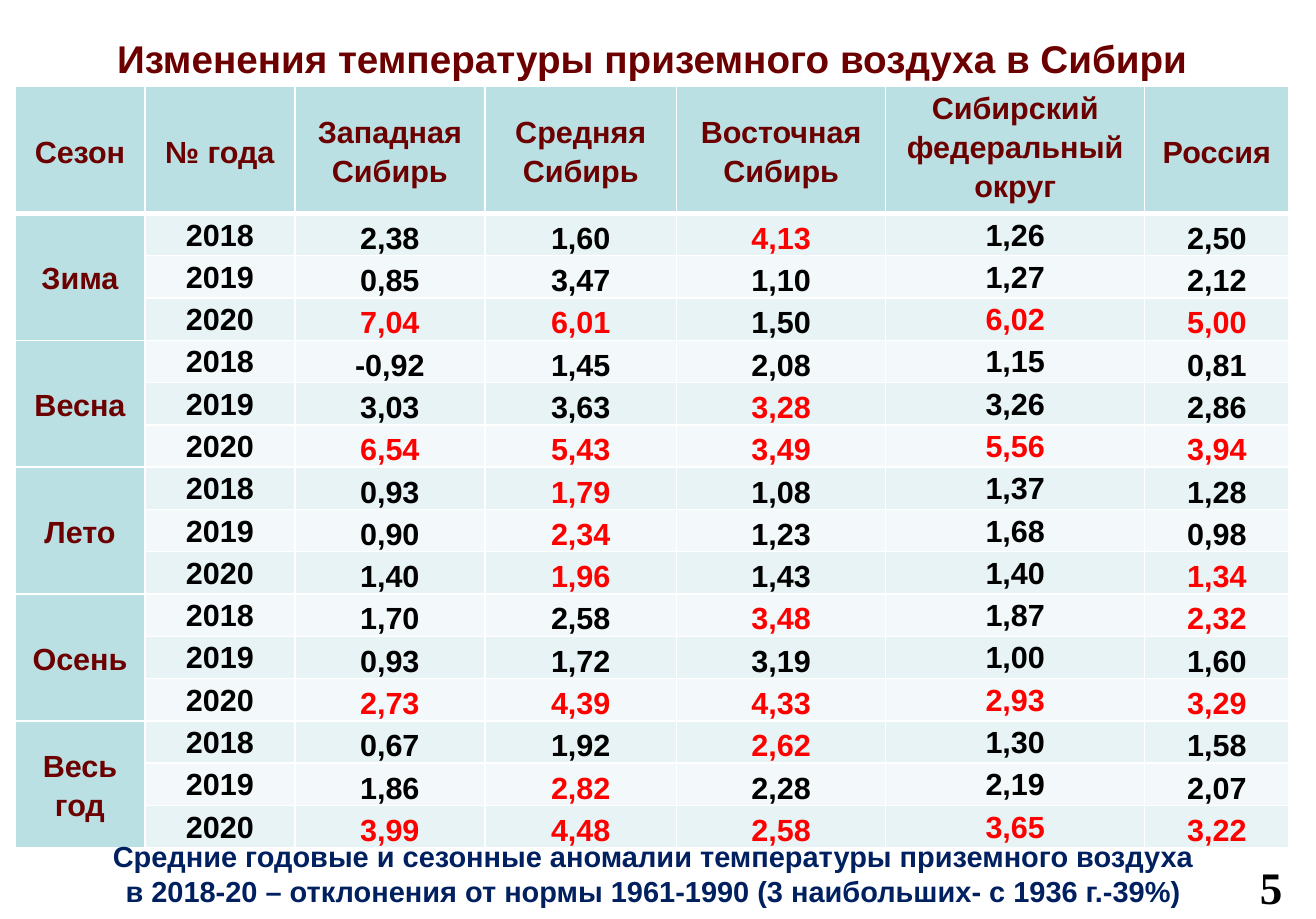
"""Build a slide with a table of seasonal air temperature anomalies in Siberia."""
from lxml.etree import SubElement
from pptx import Presentation
from pptx.dml.color import RGBColor
from pptx.enum.text import MSO_ANCHOR as Anchor, MSO_AUTO_SIZE as AutoSize, PP_ALIGN as Align
from pptx.oxml.ns import qn
from pptx.util import Pt

TITLE = "Изменения температуры приземного воздуха в Сибири"
CAPTION = [
    "Средние годовые и сезонные аномалии температуры приземного воздуха",
    "в 2018-20 – отклонения от нормы 1961-1990 (3 наибольших- с 1936 г.-39%)",
]
PAGE_NUMBER = "5"
HEADERS = ["Сезон", "№ года", "Западная Сибирь", "Средняя Сибирь", "Восточная Сибирь",
           "Сибирский федеральный округ", "Россия"]
YEARS = ["2018", "2019", "2020"]
RECORD_MARK = "*"
SEASONS = {
    "Зима": ["2,38 1,60 4,13* 1,26 2,50",
             "0,85 3,47 1,10 1,27 2,12",
             "7,04* 6,01* 1,50 6,02* 5,00*"],
    "Весна": ["-0,92 1,45 2,08 1,15 0,81",
              "3,03 3,63 3,28* 3,26 2,86",
              "6,54* 5,43* 3,49* 5,56* 3,94*"],
    "Лето": ["0,93 1,79* 1,08 1,37 1,28",
             "0,90 2,34* 1,23 1,68 0,98",
             "1,40 1,96* 1,43 1,40 1,34*"],
    "Осень": ["1,70 2,58 3,48* 1,87 2,32*",
              "0,93 1,72 3,19 1,00 1,60",
              "2,73* 4,39* 4,33* 2,93* 3,29*"],
    "Весь год": ["0,67 1,92 2,62* 1,30 1,58",
                 "1,86 2,82* 2,28 2,19 2,07",
                 "3,99* 4,48* 2,58* 3,65* 3,22*"],
}
COLORS = {"maroon": "6C0000", "navy": "002060", "black": "000000", "red": "FF0000",
          "white": "FFFFFF", "head": "BBE0E3", "odd": "E7F3F4", "even": "F3F9FA"}

SLIDE_SIZE = (818, 571)
COLUMN_WIDTHS = [80.8, 93.2, 118.1, 119.2, 130, 161, 89.7]
HEAD_HEIGHT, ROW_HEIGHT = 78.8, 26.3
TABLE_LEFT, TABLE_TOP = 9.3, 53.8
YEAR_COLUMN, DISTRICT_COLUMN = 1, 5


def rgb(name):
    return RGBColor.from_string(COLORS[name])


def set_font(font, size, color, name="Arial"):
    font.size, font.name, font.bold = Pt(size), name, True
    font.color.rgb = rgb(color)


def set_borders(cell, top, bottom):
    properties = cell._tc.get_or_add_tcPr()
    for side, width in (("L", 1), ("R", 1), ("T", top), ("B", bottom)):
        line = SubElement(properties, qn(f"a:ln{side}"), w=str(Pt(width)))
        fill = SubElement(line, qn("a:solidFill"))
        SubElement(fill, qn("a:srgbClr"), val=COLORS["white"])


def fill_cell(cell, text, color, background, anchor, top=1, bottom=1):
    set_borders(cell, top, bottom)
    cell.fill.solid()
    cell.fill.fore_color.rgb = rgb(background)
    cell.margin_left = cell.margin_right = Pt(6.5)
    cell.margin_top = cell.margin_bottom = 0
    cell.vertical_anchor = anchor
    para = cell.text_frame.paragraphs[0]
    para.text = text
    para.alignment, para.line_spacing = Align.CENTER, 1.15
    set_font(para.font, 19, color)


def add_title(page):
    box = page.shapes.title
    box.left, box.top, box.width, box.height = 0, 0, Pt(SLIDE_SIZE[0]), Pt(42)
    frame = box.text_frame
    frame.auto_size, frame.vertical_anchor = AutoSize.NONE, Anchor.TOP
    frame.margin_left = frame.margin_right = Pt(8)
    frame.margin_top = frame.margin_bottom = Pt(4)
    para = frame.paragraphs[0]
    para.alignment, para.line_spacing, para.space_before = Align.CENTER, 1.5, Pt(6.6)
    for text, size in ((TITLE, 24), (" ", 26)):
        span = para.add_run()
        span.text = text
        set_font(span.font, size, "maroon")


def add_anomaly_table(page):
    row_count = 1 + len(SEASONS) * len(YEARS)
    height = HEAD_HEIGHT + (row_count - 1) * ROW_HEIGHT
    table = page.shapes.add_table(row_count, len(HEADERS), Pt(TABLE_LEFT), Pt(TABLE_TOP),
                                  Pt(sum(COLUMN_WIDTHS)), Pt(height)).table
    for column, width in zip(table.columns, COLUMN_WIDTHS):
        column.width = Pt(width)
    for index, row in enumerate(table.rows):
        row.height = Pt(ROW_HEIGHT if index else HEAD_HEIGHT)

    for column, text in enumerate(HEADERS):
        anchor = Anchor.TOP if column == DISTRICT_COLUMN else Anchor.MIDDLE
        fill_cell(table.cell(0, column), text, "maroon", "head", anchor, bottom=3)

    for group, (season, lines) in enumerate(SEASONS.items()):
        first = 1 + group * len(YEARS)
        for row, (year, line) in enumerate(zip(YEARS, lines), first):
            top = 3 if row == 1 else 1
            label = season if row == first else ""
            fill_cell(table.cell(row, 0), label, "maroon", "head", Anchor.MIDDLE, top)
            for column, value in enumerate([year, *line.split()], YEAR_COLUMN):
                color = "red" if value.endswith(RECORD_MARK) else "black"
                raised = column in (YEAR_COLUMN, DISTRICT_COLUMN)
                fill_cell(table.cell(row, column), value.rstrip(RECORD_MARK), color,
                          "odd" if row % 2 else "even",
                          Anchor.TOP if raised else Anchor.BOTTOM, top)
        table.cell(first, 0).merge(table.cell(first + len(YEARS) - 1, 0))


def add_text(page, lines, area, size, color, font, align, wrap):
    frame = page.shapes.add_textbox(*map(Pt, area)).text_frame
    frame.word_wrap = wrap
    frame.margin_top = frame.margin_bottom = Pt(4)
    for index, line in enumerate(lines):
        para = frame.add_paragraph() if index else frame.paragraphs[0]
        para.text, para.alignment = line, align
        set_font(para.font, size, color, font)


def main():
    deck = Presentation()
    deck.slide_width, deck.slide_height = map(Pt, SLIDE_SIZE)
    page = deck.slides.add_slide(deck.slide_layouts[5])
    add_title(page)
    add_anomaly_table(page)
    add_text(page, CAPTION, (2, 517, 808, 52), 18, "navy", "Arial", Align.CENTER, True)
    add_text(page, [PAGE_NUMBER], (776, 530, 28, 41), 28, "black", "Times New Roman",
             Align.LEFT, False)
    deck.save("out.pptx")


if __name__ == "__main__":
    main()
